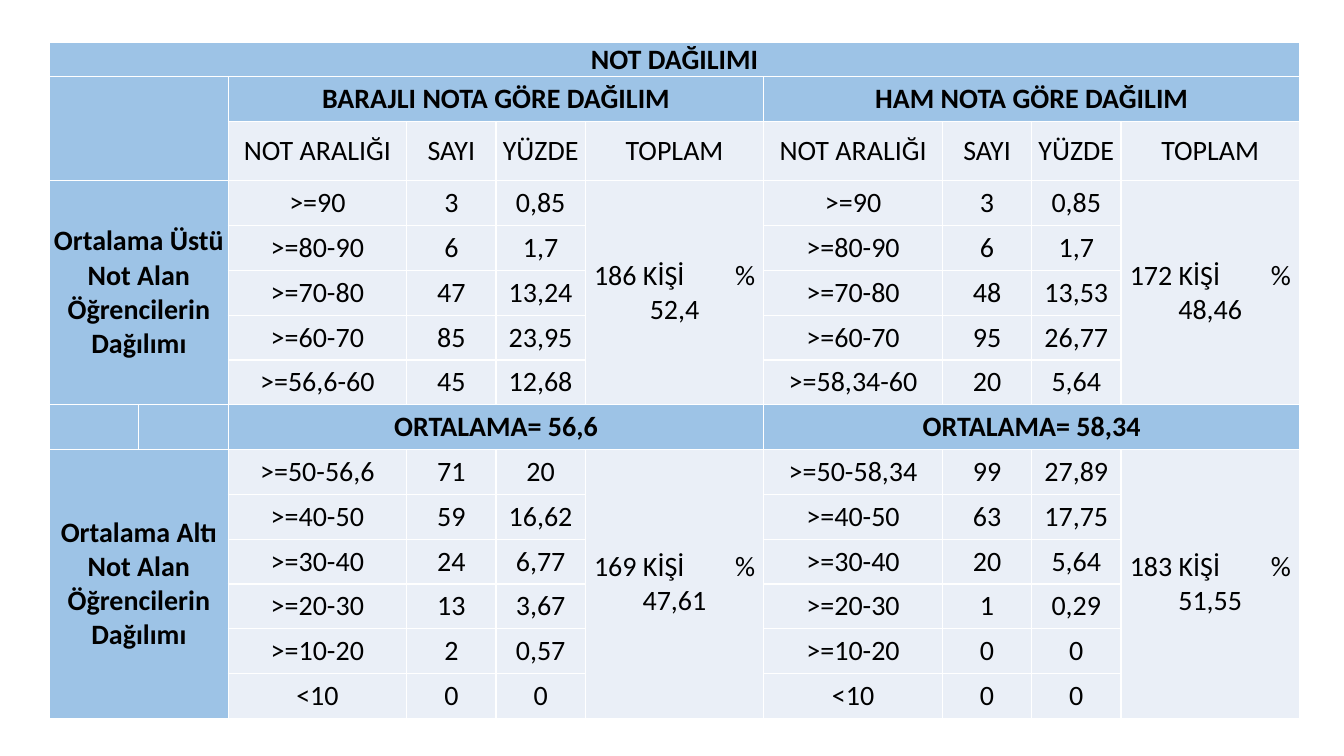
import pptx
import pptx.dml.color
import pptx.enum.text
import pptx.oxml
import pptx.oxml.ns
import pptx.util
from pptx.util import Cm

HEADER_BLUE = "9DC3E6"
BODY_BLUE = "EAEFF7"
COLUMN_UNIT = 2.25
COLUMN_SPANS = [1, 1, 2, 1, 1, 2, 2, 1, 1, 2]
ROW_HEIGHTS = [0.86, 1.13, 1.49] + [1.13] * 12
HEADINGS = ["NOT ARALIĞI", "SAYI", "YÜZDE", "TOPLAM"]
SIDE_LABELS = [
    (3, 5, "Ortalama Üstü Not Alan Öğrencilerin Dağılımı"),
    (9, 6, "Ortalama Altı Not Alan Öğrencilerin Dağılımı"),
]
DISTRIBUTIONS = [
    {
        "column": 2,
        "title": "BARAJLI NOTA GÖRE DAĞILIM",
        "average": "ORTALAMA= 56,6",
        "groups": [
            (3, ("186 KİŞİ", "% 52,4"), [
                (">=90", "3", "0,85"), (">=80-90", "6", "1,7"),
                (">=70-80", "47", "13,24"), (">=60-70", "85", "23,95"),
                (">=56,6-60", "45", "12,68")]),
            (9, ("169 KİŞİ", "% 47,61"), [
                (">=50-56,6", "71", "20"), (">=40-50", "59", "16,62"),
                (">=30-40", "24", "6,77"), (">=20-30", "13", "3,67"),
                (">=10-20", "2", "0,57"), ("<10", "0", "0")]),
        ],
    },
    {
        "column": 6,
        "title": "HAM NOTA GÖRE DAĞILIM",
        "average": "ORTALAMA= 58,34",
        "groups": [
            (3, ("172 KİŞİ", "% 48,46"), [
                (">=90", "3", "0,85"), (">=80-90", "6", "1,7"),
                (">=70-80", "48", "13,53"), (">=60-70", "95", "26,77"),
                (">=58,34-60", "20", "5,64")]),
            (9, ("183 KİŞİ", "% 51,55"), [
                (">=50-58,34", "99", "27,89"), (">=40-50", "63", "17,75"),
                (">=30-40", "20", "5,64"), (">=20-30", "1", "0,29"),
                (">=10-20", "0", "0"), ("<10", "0", "0")]),
        ],
    },
]


def colour(hex_code):
    """Return the colour for a hex string."""
    return pptx.dml.color.RGBColor.from_string(hex_code)


def style_cell(cell, fill):
    """Give a cell white borders, no margins and a solid fill."""
    cell.margin_left = cell.margin_right = cell.margin_top = cell.margin_bottom = 0
    cell.vertical_anchor = pptx.enum.text.MSO_ANCHOR.MIDDLE
    properties = cell._tc.get_or_add_tcPr()
    for side in ("lnL", "lnR", "lnT", "lnB"):
        properties.append(pptx.oxml.parse_xml(
            f'<a:{side} {pptx.oxml.ns.nsdecls("a")} w="12700"><a:solidFill>'
            f'<a:srgbClr val="FFFFFF"/></a:solidFill></a:{side}>'))
    cell.fill.solid()
    cell.fill.fore_color.rgb = colour(fill)


def write_cell(table, row, column, parts, bold=False, rows=1, columns=1):
    """Merge the cell over its span and write its centred text."""
    cell = table.cell(row, column)
    if rows * columns > 1:
        cell.merge(table.cell(row + rows - 1, column + columns - 1))
    para = cell.text_frame.paragraphs[0]
    para.alignment = pptx.enum.text.PP_ALIGN.CENTER
    para.font.name = "Calibri"
    para.font.size = pptx.util.Pt(20)
    para.font.bold = bold
    para.font.color.rgb = colour("000000")
    for part in parts:
        if para.runs:
            gap = para.add_run()
            gap.text = " "
            gap._r.get_or_add_rPr().set("spc", "3150")
        span = para.add_run()
        span.text = part
    return cell


def add_distribution(table, distribution):
    """Fill the four columns of one grade distribution."""
    left = distribution["column"]
    write_cell(table, 1, left, [distribution["title"]], True, columns=4)
    write_cell(table, 8, left, [distribution["average"]], True, columns=4)
    for offset, heading in enumerate(HEADINGS):
        write_cell(table, 2, left + offset, [heading])
    for top, total, records in distribution["groups"]:
        write_cell(table, top, left + 3, total, rows=len(records))
        for row, record in enumerate(records, top):
            for column, value in enumerate(record, left):
                write_cell(table, row, column, [value])


def add_grade_table(page, left, top):
    """Build the whole grade table from its top left corner."""
    width, height = COLUMN_UNIT * sum(COLUMN_SPANS), sum(ROW_HEIGHTS)
    table = page.shapes.add_table(
        len(ROW_HEIGHTS), len(COLUMN_SPANS),
        Cm(left), Cm(top), Cm(width), Cm(height)).table
    table.first_row = table.horz_banding = False
    for column, units in zip(table.columns, COLUMN_SPANS):
        column.width = Cm(COLUMN_UNIT * units)
    for row, row_height in zip(table.rows, ROW_HEIGHTS):
        row.height = Cm(row_height)
    for row in range(len(ROW_HEIGHTS)):
        for column in range(len(COLUMN_SPANS)):
            is_header = row in (0, 1, 8) or column < 2
            style_cell(table.cell(row, column), HEADER_BLUE if is_header else BODY_BLUE)
    write_cell(table, 0, 0, ["NOT DAĞILIMI"], True, columns=len(COLUMN_SPANS))
    table.cell(1, 0).merge(table.cell(2, 1))
    for top_row, rows, label in SIDE_LABELS:
        write_cell(table, top_row, 0, [label], True, rows=rows, columns=2)
    for distribution in DISTRIBUTIONS:
        add_distribution(table, distribution)


def main():
    """Create the deck with the grade distribution page."""
    deck = pptx.Presentation()
    deck.slide_width, deck.slide_height = Cm(33.87), Cm(19.05)
    page = deck.slides.add_slide(deck.slide_layouts[6])
    add_grade_table(page, 1.25, 1.07)
    deck.save("out.pptx")


if __name__ == "__main__":
    main()
